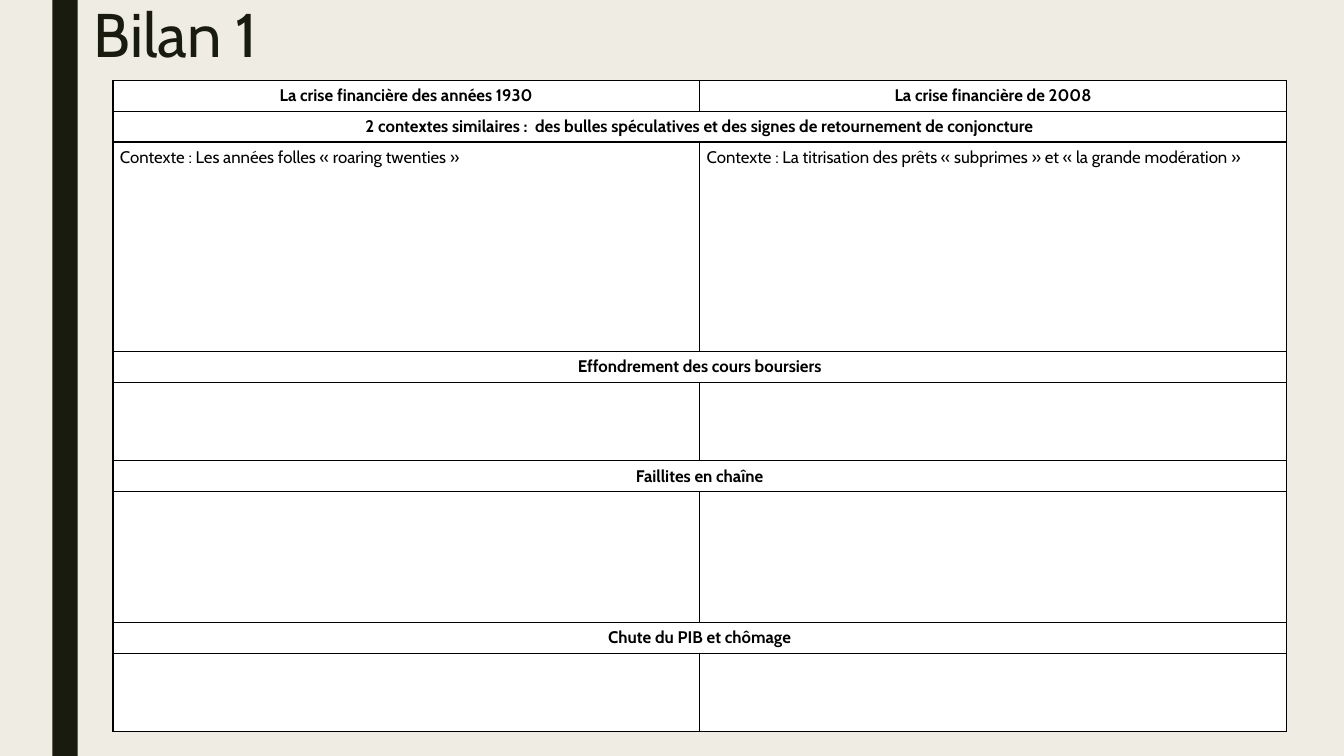
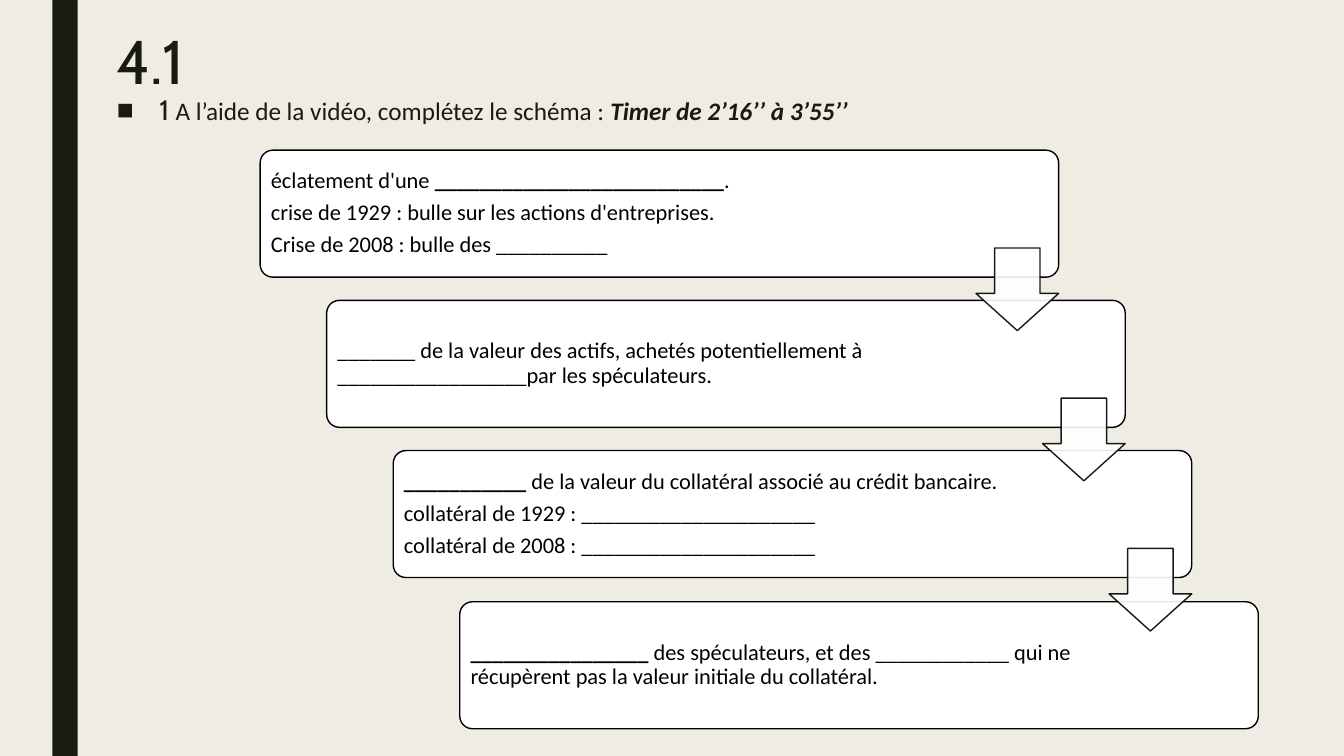
from lxml import etree
from pptx import Presentation
from pptx import util as u
from pptx.dml.color import RGBColor
from pptx.enum import shapes, text
from pptx.oxml import parse_xml
from pptx.oxml.ns import nsdecls, qn

PX = 9144  # EMU per px, 100 px to the inch
W, H = 1333, 750
COLORS = {"paper": "EFEDE3", "ink": "191B0E", "white": "FFFFFF", "black": "000000"}
HEAD, BODY = "Cabin", "Calibri"
LEFT, CENTER, JUSTIFY = text.PP_ALIGN.LEFT, text.PP_ALIGN.CENTER, text.PP_ALIGN.JUSTIFY
TOP, MIDDLE = text.MSO_ANCHOR.TOP, text.MSO_ANCHOR.MIDDLE

TABLE_ROWS = [  # height, one text per cell (a single text spans the row)
    (30, ["La crise financière des années 1930", "La crise financière de 2008"]),
    (30, ["2 contextes similaires :  des bulles spéculatives et des signes de retournement de conjoncture"]),
    (208, ["Contexte : Les années folles « roaring twenties »",
           "Contexte : La titrisation des prêts « subprimes » et « la grande modération »"]),
    (30, ["Effondrement des cours boursiers"]),
    (78, ["", ""]),
    (30, ["Faillites en chaîne"]),
    (130, ["", ""]),
    (30, ["Chute du PIB et chômage"]),
    (78, ["", ""]),
]
STEPS = [  # paragraphs of (text, bold) runs
    [[("éclatement d'une ", False), ("_" * 26, True), (".", False)],
     [("crise de 1929 : bulle sur les actions d'entreprises.", False)],
     [("Crise de 2008 : bulle des " + "_" * 10, False)]],
    [[("_" * 7 + " de la valeur des actifs, achetés potentiellement à "
       + "_" * 17 + "par les spéculateurs.", False)]],
    [[("_" * 11, True), (" de la valeur du collatéral associé au crédit bancaire.", False)],
     [("collatéral de 1929 : " + "_" * 21, False)],
     [("collatéral de 2008 : " + "_" * 21, False)]],
    [[("_" * 16, True), (" des spéculateurs, et des " + "_" * 12
                         + " qui ne récupèrent pas la valeur initiale du collatéral.", False)]],
]


def rgb(name):
    return RGBColor.from_string(COLORS[name])


def px(*lengths):
    return [u.Emu(n * PX) for n in lengths]


def paint(fill, color):
    fill.solid()
    fill.fore_color.rgb = rgb(color)


def add_run(p, words, size, font, color="black", bold=False, italic=False):
    r = p.add_run()
    r.text = words
    f = r.font
    f.size, f.name, f.bold, f.italic = u.Pt(size), font, bold, italic
    f.color.rgb = rgb(color)


def add_box(slide, kind, box, fill, line=None):
    sp = slide.shapes.add_shape(kind, *px(*box))
    sp.shadow.inherit = False
    paint(sp.fill, fill)
    if line:
        sp.line.color.rgb = rgb(line)
        sp.line.width = u.Pt(1)
    else:
        sp.line.fill.background()
    return sp


def place(sp, box):
    """Move a placeholder and return its first paragraph."""
    sp.left, sp.top, sp.width, sp.height = px(*box)
    tf = sp.text_frame
    tf.word_wrap, tf.auto_size, tf.vertical_anchor = True, text.MSO_AUTO_SIZE.NONE, TOP
    p = tf.paragraphs[0]
    p.alignment = LEFT
    return p


def add_slide(prs, layout, title, box):
    slide = prs.slides.add_slide(prs.slide_layouts[layout])
    p = place(slide.shapes.title, box)
    p.line_spacing = 0.89
    add_run(p, title, 44, HEAD, "ink")
    return slide


def dress_master(prs, slide):
    """Shared background and dark band, held by the master."""
    master = prs.slide_master
    paint(master.background.fill, "paper")
    band = add_box(slide, shapes.MSO_SHAPE.RECTANGLE, (52, 0, 25, H), "ink")
    master.shapes.element.insert(2, band.element)


def format_cell(cell):
    tcPr = cell._tc.get_or_add_tcPr()
    for side in ("lnL", "lnR", "lnT", "lnB"):
        tcPr.append(parse_xml(
            f'<a:{side} {nsdecls("a")} w="12192"><a:solidFill>'
            f'<a:srgbClr val="{COLORS["black"]}"/></a:solidFill></a:{side}>'))
    paint(cell.fill, "white")
    cell.margin_left, cell.margin_right, cell.margin_top, cell.margin_bottom = px(7, 7, 5, 5)


def add_comparison(slide, box):
    tbl = slide.shapes.add_table(len(TABLE_ROWS), 2, *px(*box)).table
    tbl.first_row = tbl.horz_banding = False
    for col in tbl.columns:
        col.width = u.Emu(box[2] * PX // 2)
    for i, (height, texts) in enumerate(TABLE_ROWS):
        tbl.rows[i].height = u.Emu(height * PX)
        for j in range(2):
            format_cell(tbl.cell(i, j))
        if len(texts) == 1:
            tbl.cell(i, 0).merge(tbl.cell(i, 1))
        heading = height == 30
        for j, words in enumerate(texts):
            if words:
                p = tbl.cell(i, j).text_frame.paragraphs[0]
                p.alignment = CENTER if heading else JUSTIFY
                add_run(p, words, 12, HEAD, bold=heading)


def add_instruction(slide, box):
    p = place(slide.placeholders[1], box)
    p.line_spacing, p.space_before, p.space_after = 0.94, u.Pt(10), u.Pt(2)
    # Square bullet with a hanging indent
    pPr = p._p.get_or_add_pPr()
    pPr.set("marL", str(42 * PX))
    pPr.set("indent", str(-42 * PX))
    color = etree.SubElement(pPr, qn("a:buClr"))
    etree.SubElement(color, qn("a:srgbClr"), val=COLORS["ink"])
    etree.SubElement(pPr, qn("a:buChar"), char="■")
    add_run(p, "1 ", 20, HEAD, "ink")
    add_run(p, "A l’aide de la vidéo, complétez le schéma : ", 18, BODY, "ink")
    add_run(p, "Timer de 2’16’’ à 3’55’’", 18, BODY, "ink", bold=True, italic=True)


def add_step(slide, box, paragraphs):
    sp = add_box(slide, shapes.MSO_SHAPE.ROUNDED_RECTANGLE, box, "white", "black")
    sp.adjustments[0] = 0.1
    tf = sp.text_frame
    tf.word_wrap, tf.vertical_anchor = True, MIDDLE
    # The wide right margin keeps the text clear of the arrows
    tf.margin_left, tf.margin_right, tf.margin_top, tf.margin_bottom = px(7, 155, 7, 7)
    for k, runs in enumerate(paragraphs):
        p = tf.add_paragraph() if k else tf.paragraphs[0]
        p.alignment, p.line_spacing, p.space_after = LEFT, 0.9, u.Pt(5.6)
        for words, bold in runs:
            add_run(p, words, 16, BODY, bold=bold)


def add_arrow(slide, box):
    sp = add_box(slide, shapes.MSO_SHAPE.DOWN_ARROW, box, "white", "black")
    sp.adjustments[0], sp.adjustments[1] = 0.55, 0.45
    for clr in sp.element.spPr.iter(qn("a:srgbClr")):
        etree.SubElement(clr, qn("a:alpha"), val="90000")


def add_staircase(slide, box):
    """Steps go down to the right, an arrow joining each to the next."""
    x, y, w, h = box
    step_w, step_h, arrow = 792, 126, 82
    last = len(STEPS) - 1
    corners = [(x + i * (w - step_w) // last, y + i * (h - step_h) // last)
               for i in range(len(STEPS))]
    for (left, top), paragraphs in zip(corners, STEPS):
        add_step(slide, (left, top, step_w, step_h), paragraphs)
    for left, top in corners[:-1]:
        add_arrow(slide, (left + step_w - arrow, top + 97, arrow, arrow))


def main():
    prs = Presentation()
    prs.slide_width, prs.slide_height = px(W, H)

    # Comparison table
    slide = add_slide(prs, 5, "Bilan 1", (83, 0, 1050, 78))
    dress_master(prs, slide)
    add_comparison(slide, (112, 80, 1164, 644))

    # Diagram to complete
    slide = add_slide(prs, 1, "4.1", (106, 27, 1050, 162))
    add_instruction(slide, (106, 89, 1094, 552))
    add_staircase(slide, (258, 149, 990, 574))

    prs.save("out.pptx")


if __name__ == "__main__":
    main()
